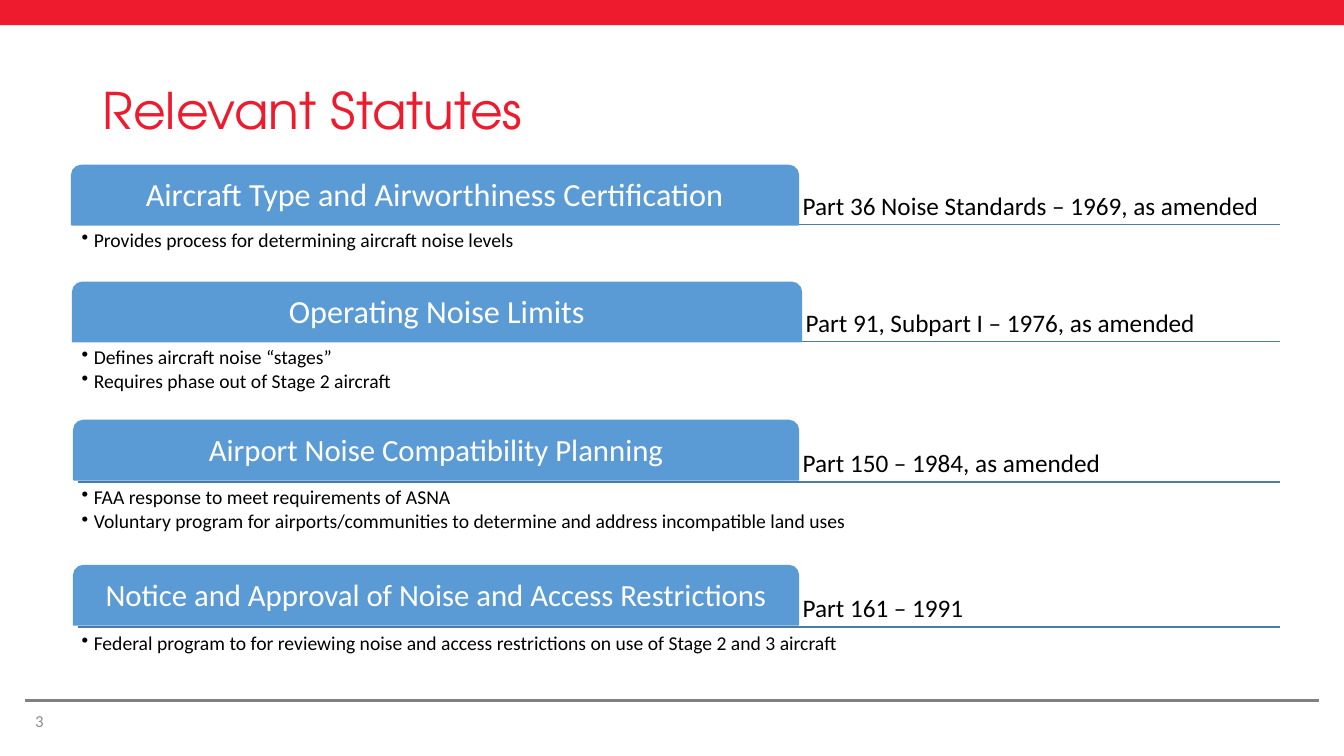
from dataclasses import dataclass

from lxml import etree
from pptx import Presentation
from pptx.dml.color import RGBColor
from pptx.enum.shapes import MSO_CONNECTOR, MSO_SHAPE
from pptx.enum.text import MSO_ANCHOR, PP_ALIGN
from pptx.oxml.ns import qn
from pptx.util import Inches, Pt

STRAIGHT = MSO_CONNECTOR.STRAIGHT
RECTANGLE = MSO_SHAPE.RECTANGLE
TAB_SHAPE = MSO_SHAPE.ROUND_2_SAME_RECTANGLE
TOP, MIDDLE, BOTTOM = MSO_ANCHOR.TOP, MSO_ANCHOR.MIDDLE, MSO_ANCHOR.BOTTOM
LEFT, CENTER = PP_ALIGN.LEFT, PP_ALIGN.CENTER

SLIDE_WIDTH, SLIDE_HEIGHT = 13.33, 7.5
MARGIN = 0.25
FOOTER_TOP = 6.95
RULE_LEFT, RULE_RIGHT = 0.77, 12.7
TAB_HEIGHT = 0.59
BULLET_GAP = 0.02
BULLET_INDENT = 0.12


@dataclass(frozen=True)
class Theme:
    red: str = "ED1B2D"
    blue: str = "5B9BD5"
    rule: str = "497CAB"
    gray: str = "808080"
    number: str = "8C8C8C"
    black: str = "000000"
    white: str = "FFFFFF"
    title_font: str = "TeX Gyre Adventor"
    body_font: str = "Calibri"
    title_size: int = 36
    citation_size: int = 18
    bullet_size: int = 14
    number_size: int = 12


@dataclass(frozen=True)
class Statute:
    heading: str
    heading_size: int
    citation: str
    bullets: tuple
    tab_left: float
    tab_right: float
    tab_top: float
    rule_y: float
    bottom: float


THEME = Theme()

STATUTES = (
    Statute("Aircraft Type and Airworthiness Certification", 23,
            "Part 36 Noise Standards – 1969, as amended",
            ("Provides process for determining aircraft noise levels",),
            0.71, 7.92, 1.64, 2.23, 3.29),
    Statute("Operating Noise Limits", 23,
            "Part 91, Subpart I – 1976, as amended",
            ("Defines aircraft noise “stages”",
             "Requires phase out of Stage 2 aircraft"),
            0.72, 7.95, 2.8, 3.39, 4.19),
    Statute("Airport Noise Compatibility Planning", 22,
            "Part 150 – 1984, as amended",
            ("FAA response to meet requirements of ASNA",
             "Voluntary program for airports/communities to determine "
             "and address incompatible land uses"),
            0.73, 7.92, 4.17, 4.78, 5.6),
    Statute("Notice and Approval of Noise and Access Restrictions", 22,
            "Part 161 – 1991",
            ("Federal program to for reviewing noise and access restrictions "
             "on use of Stage 2 and 3 aircraft",),
            0.73, 7.92, 5.61, 6.22, 6.82),
)


def add_line(slide, left, right, y, color, weight):
    line = slide.shapes.add_connector(
        STRAIGHT, Inches(left), Inches(y), Inches(right), Inches(y))
    line.line.color.rgb = RGBColor.from_string(color)
    line.line.width = Pt(weight)
    etree.SubElement(line._element.spPr, qn("a:effectLst"))


def add_block(slide, preset, left, top, width, height, color):
    shape = slide.shapes.add_shape(
        preset, Inches(left), Inches(top), Inches(width), Inches(height))
    shape.shadow.inherit = False
    shape.fill.solid()
    shape.fill.fore_color.rgb = RGBColor.from_string(color)
    return shape


def add_text_box(slide, left, top, width, height):
    return slide.shapes.add_textbox(
        Inches(left), Inches(top), Inches(width), Inches(height))


def add_bullet(paragraph):
    properties = paragraph._p.get_or_add_pPr()
    properties.set("marL", str(Inches(BULLET_INDENT)))
    properties.set("indent", str(-Inches(BULLET_INDENT)))
    etree.SubElement(properties, qn("a:buChar")).set("char", "•")


def write(shape, lines, size, color, font=THEME.body_font, anchor=MIDDLE,
          alignment=LEFT, inset=None, bulleted=False, spacing=0.9):
    frame = shape.text_frame
    frame.text = "\n".join(lines)
    frame.word_wrap = True
    frame.vertical_anchor = anchor
    if inset is not None:
        frame.margin_left = frame.margin_right = Inches(inset)
        frame.margin_top = frame.margin_bottom = Inches(inset)
    for paragraph in frame.paragraphs:
        if bulleted:
            add_bullet(paragraph)
            paragraph.space_after = Pt(2.1)
        paragraph.alignment = alignment
        paragraph.line_spacing = spacing
        for run in paragraph.runs:
            run.font.name = font
            run.font.size = Pt(size)
            run.font.color.rgb = RGBColor.from_string(color)


def add_frame(slide, number):
    """Draw the top band, the footer rule and the page number."""
    add_line(slide, MARGIN, SLIDE_WIDTH - MARGIN, FOOTER_TOP, THEME.gray, 2.25)
    band = add_block(slide, RECTANGLE, 0, 0, SLIDE_WIDTH, MARGIN, THEME.red)
    band.line.fill.background()
    page_number = add_text_box(slide, MARGIN, FOOTER_TOP, 0.67, 0.4)
    write(page_number, [number], THEME.number_size, THEME.number, spacing=1.0)


def add_title(slide, text, left, top, width, height):
    title = add_text_box(slide, left, top, width, height)
    write(title, [text], THEME.title_size, THEME.red, THEME.title_font)


def add_statute(slide, statute, left, right):
    """Draw one tab with its citation, rule and bullets between two edges."""
    add_line(slide, left, right, statute.rule_y, THEME.rule, 1)

    citation = add_text_box(slide, statute.tab_right, statute.rule_y - TAB_HEIGHT,
                            right - statute.tab_right, TAB_HEIGHT)
    write(citation, [statute.citation], THEME.citation_size, THEME.black,
          anchor=BOTTOM, inset=0.04)

    tab = add_block(slide, TAB_SHAPE, statute.tab_left, statute.tab_top,
                    statute.tab_right - statute.tab_left, TAB_HEIGHT, THEME.blue)
    tab.line.color.rgb = RGBColor.from_string(THEME.blue)
    tab.line.width = Pt(1)
    write(tab, [statute.heading], statute.heading_size, THEME.white,
          alignment=CENTER, inset=0.05)

    bullets_top = statute.rule_y + BULLET_GAP
    bullets = add_text_box(slide, left, bullets_top, right - left,
                           statute.bottom - bullets_top)
    write(bullets, statute.bullets, THEME.bullet_size, THEME.black,
          anchor=TOP, inset=0.04, bulleted=True)


def main():
    presentation = Presentation()
    presentation.slide_width = Inches(SLIDE_WIDTH)
    presentation.slide_height = Inches(SLIDE_HEIGHT)
    slide = presentation.slides.add_slide(presentation.slide_layouts[6])
    add_frame(slide, "3")
    add_title(slide, "Relevant Statutes", 0.92, 0.4, 11.5, 1.45)
    for statute in STATUTES:
        add_statute(slide, statute, RULE_LEFT, RULE_RIGHT)
    presentation.save("out.pptx")


if __name__ == "__main__":
    main()
